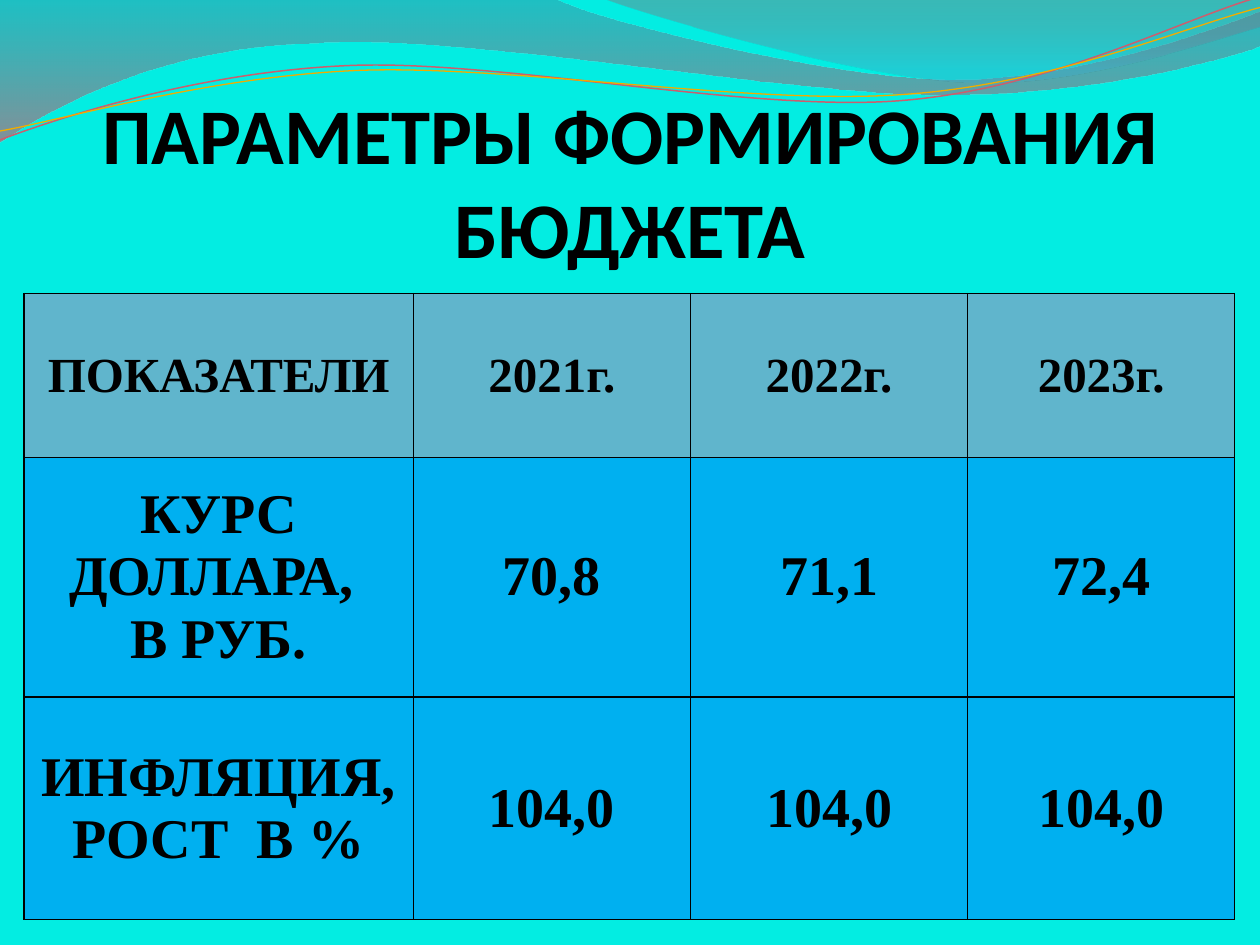
"""Build the slide of budget planning parameters with a wave header and a table."""
import math

from lxml import etree
from pptx import Presentation, util as u
from pptx.dml.color import RGBColor
from pptx.enum import text
from pptx.oxml.ns import qn

COLORS = {
    "background": "03EDE2", "ink": "000000", "header": "60B5CC", "body": "00B0F0",
    "teal": "3F8A9F", "red": "EF445B", "brick": "B84253", "sky": "42ABC7",
    "rose": "CB5F6E", "gold": "F0AD00",
}
TILT = 2.7


def write(frame, content, size, font, anchor):
    frame.word_wrap = True
    frame.vertical_anchor = anchor
    frame.text = content
    for paragraph in frame.paragraphs:
        paragraph.alignment = text.PP_ALIGN.CENTER
        for run in paragraph.runs:
            run.font.name = font
            run.font.size = u.Pt(size)
            run.font.bold = True
            run.font.color.rgb = RGBColor.from_string(COLORS["ink"])


def trace(shapes, start, segments, close, tilt=0, center=(0, 0)):
    sine, cosine = math.sin(math.radians(tilt)), math.cos(math.radians(tilt))
    points = []
    for x, y in [start] + [point for segment in segments for point in segment]:
        dx, dy = x - center[0], y - center[1]
        points.append((u.Inches(center[0] + dx * cosine - dy * sine),
                       u.Inches(center[1] + dx * sine + dy * cosine)))
    builder = shapes.build_freeform(*points[0], scale=1.0)
    builder.add_line_segments(points[1:], close=close)
    outline = builder.convert_to_shape()
    outline.shadow.inherit = False
    outline.rotation = -tilt % 360
    corners = iter(list(outline._element.spPr.iter(qn("a:lnTo"))))
    for segment in segments:
        first, *others = [next(corners) for _ in segment]
        if others:
            curve = etree.Element(qn("a:cubicBezTo"))
            first.addprevious(curve)
            for corner in (first, *others):
                curve.append(corner[0])
                corner.getparent().remove(corner)
    return outline


deck = Presentation()
deck.slide_width, deck.slide_height = u.Inches(10), u.Inches(7.5)
slide = deck.slides.add_slide(deck.slide_layouts[5])
slide.background.fill.solid()
slide.background.fill.fore_color.rgb = RGBColor.from_string(COLORS["background"])

waves = [
    ((0, 0),
     [[(4.4, -0.01)],
      [(4.76, 0.17), (6.64, 0.63), (7.58, 0.63)],
      [(8.53, 0.63), (9.58, 0.26), (10, 0.09)],
      [(10.01, 0.36)],
      [(9.83, 0.44), (8.7, 0.76), (7.46, 0.75)],
      [(6.22, 0.75), (3.82, 0.28), (2.57, 0.34)],
      [(1.29, 0.36), (0.46, 0.83), (-0.01, 1.13)],
      [(0, 0)]],
     [(0, "teal", 45), (1, "red", 55)]),
    ((4.79, -0.01),
     [[(5.09, 0.11), (6.82, 0.62), (7.69, 0.65)],
      [(8.56, 0.69), (9.61, 0.32), (10, 0.21)],
      [(10, 0)],
      [(4.79, -0.01)]],
     [(0, "brick", 30), (0.8, "sky", 45)]),
]
for start, segments, stops in waves:
    wave = trace(slide.shapes, start, segments, close=True)
    wave.line.fill.background()
    wave.fill.gradient()
    wave.fill.gradient_angle = 270
    for stop, (position, color, _) in zip(wave.fill.gradient_stops, stops):
        stop.position = position
        stop.color.rgb = RGBColor.from_string(COLORS[color])
    for tint, (_, _, opacity) in zip(wave._element.spPr.iter(qn("a:srgbClr")), stops):
        etree.SubElement(tint, qn("a:alpha"), val=str(opacity * 1000))

strands = [
    ((0, 1.11),
     [[(0.48, 0.93), (1.58, 0.57), (2.77, 0.52)],
      [(3.95, 0.47), (5.93, 0.89), (7.13, 0.8)],
      [(8.33, 0.71), (9.38, 0.15), (9.98, -0.02)]], (4.99, 0.58), "rose", 0.85),
    ((0, 1.04),
     [[(0.47, 0.96), (1.64, 0.61), (2.83, 0.56)],
      [(4.03, 0.51), (5.97, 0.84), (7.17, 0.75)],
      [(8.36, 0.67), (9.41, 0.21), (10, 0.06)]], (5, 0.59), "gold", 0.75),
]
for start, segments, center, color, width in strands:
    strand = trace(slide.shapes, start, segments, close=False, tilt=TILT, center=center)
    strand.fill.background()
    strand.line.color.rgb = RGBColor.from_string(COLORS[color])
    strand.line.width = u.Pt(width)

heading = slide.shapes.title
heading.left, heading.top = u.Inches(0.5), u.Inches(0.77)
heading.width, heading.height = u.Inches(9), u.Inches(1.41)
write(heading.text_frame, "ПАРАМЕТРЫ ФОРМИРОВАНИЯ БЮДЖЕТА", size=45, font="Calibri",
      anchor=text.MSO_ANCHOR.BOTTOM)
heading.text_frame.auto_size = text.MSO_AUTO_SIZE.NONE
heading.text_frame.margin_left = heading.text_frame.margin_right = 0
heading.text_frame.margin_top, heading.text_frame.margin_bottom = u.Inches(0.05), 0
slide.shapes._spTree.append(heading._element)

indicators = [
    ["ПОКАЗАТЕЛИ", "2021г.", "2022г.", "2023г."],
    ["КУРС ДОЛЛАРА, \nВ РУБ.", "70,8", "71,1", "72,4"],
    ["ИНФЛЯЦИЯ,\nРОСТ  В %", "104,0", "104,0", "104,0"],
]
columns, rows = [3.09, 2.2, 2.2, 2.12], [1.3, 1.9, 1.77]
grid = slide.shapes.add_table(len(rows), len(columns), u.Inches(0.19), u.Inches(2.33),
                              u.Inches(sum(columns)), u.Inches(sum(rows))).table
grid.first_row = grid.horz_banding = False
for column, width in zip(grid.columns, columns):
    column.width = u.Inches(width)
for r, (height, values) in enumerate(zip(rows, indicators)):
    grid.rows[r].height = u.Inches(height)
    for c, value in enumerate(values):
        cell = grid.cell(r, c)
        write(cell.text_frame, value, size=32 if r else 28, font="Times New Roman",
              anchor=None)
        cell.vertical_anchor = text.MSO_ANCHOR.MIDDLE
        for side in ("lnL", "lnR", "lnT", "lnB"):
            border = etree.SubElement(cell._tc.get_or_add_tcPr(), qn(f"a:{side}"), w=str(u.Pt(1)))
            paint = etree.SubElement(border, qn("a:solidFill"))
            etree.SubElement(paint, qn("a:srgbClr"), val=COLORS["ink"])
        cell.fill.solid()
        cell.fill.fore_color.rgb = RGBColor.from_string(COLORS["body" if r else "header"])

deck.save("out.pptx")
